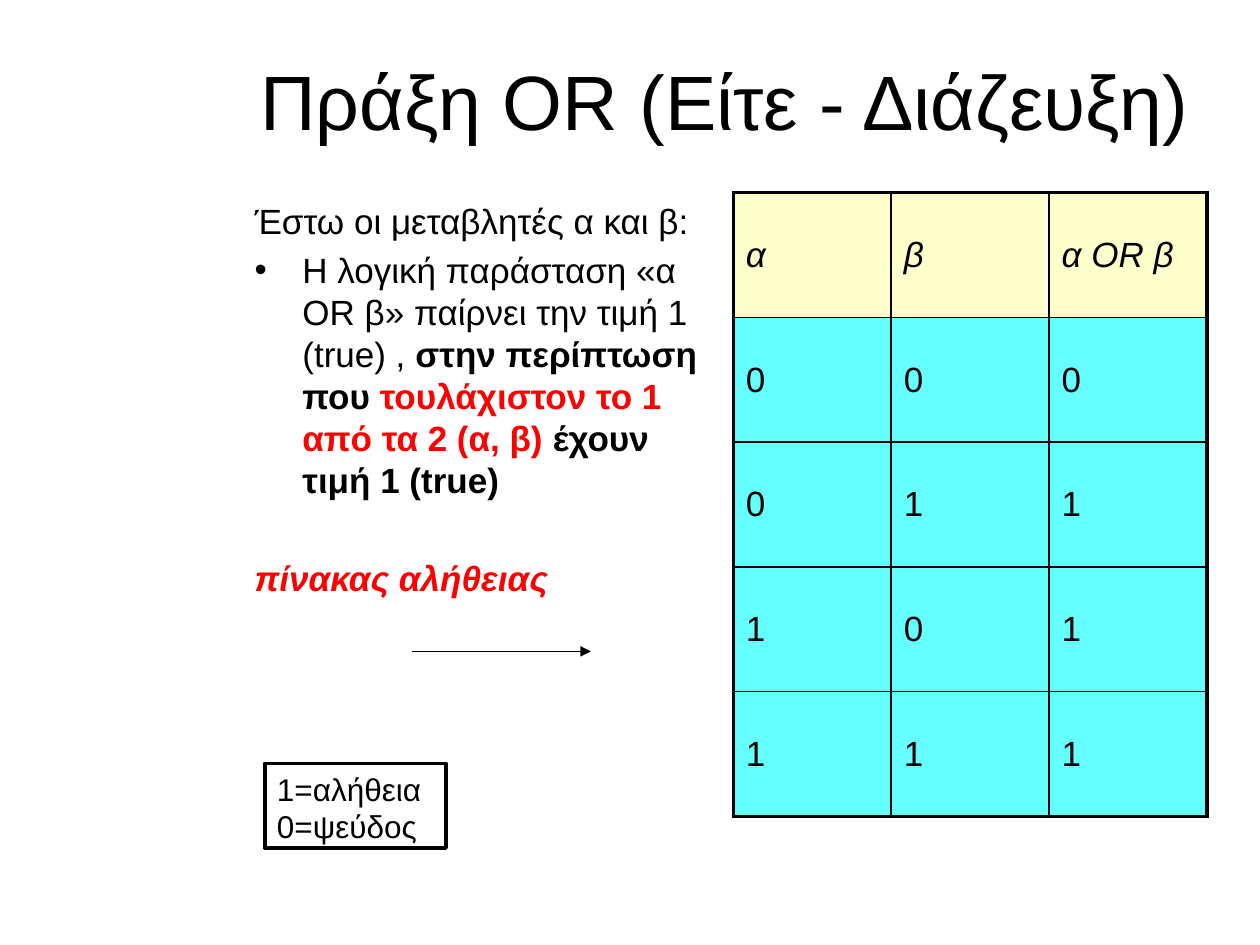
import pptx
import pptx.dml.color
import pptx.enum.shapes
import pptx.enum.text
import pptx.oxml.ns
import pptx.oxml.xmlchemy
import pptx.util
from lxml import etree

Inches, Pt = pptx.util.Inches, pptx.util.Pt
ANCHOR = pptx.enum.text.MSO_ANCHOR
ALIGN = pptx.enum.text.PP_ALIGN
BLACK, RED, CREAM, CYAN = "000000", "FF0000", "FFFFCC", "66FFFF"


def color(code):
    return pptx.dml.color.RGBColor.from_string(code)


def add_node(parent, tag, **attrs):
    return etree.SubElement(parent, pptx.oxml.ns.qn(tag), attrs)


class Board:
    """Holds the text style and the slide being filled."""

    def __init__(self, slide, font="Arial", size=20):
        self.slide, self.font, self.size = slide, font, size

    def style(self, run, size=None, tint=BLACK, bold=False, italic=False):
        font = run.font
        font.name, font.size = self.font, Pt(size or self.size)
        font.bold, font.italic = bold, italic
        font.color.rgb = color(tint)

    def place(self, shape, left, top, width, height):
        shape.left, shape.top = Inches(left), Inches(top)
        shape.width, shape.height = Inches(width), Inches(height)
        shape.text_frame.auto_size = pptx.enum.text.MSO_AUTO_SIZE.NONE

    def title(self, text, *area):
        shape = self.slide.shapes.title
        self.place(shape, *area)
        frame = shape.text_frame
        frame.text = text
        frame.vertical_anchor = ANCHOR.MIDDLE
        frame.paragraphs[0].alignment = ALIGN.CENTER
        self.style(frame.paragraphs[0].runs[0], size=44)

    def body(self, items, *area):
        """Each item is (bullet or None, space before, [(text, style)])."""
        shape = self.slide.placeholders[1]
        self.place(shape, *area)
        frame = shape.text_frame
        frame.text = "\n" * (len(items) - 1)
        for para, (mark, space, parts) in zip(frame.paragraphs, items):
            props = para._p.get_or_add_pPr()
            props.set("marL", str(Inches(0.38)))
            props.set("indent", str(-Inches(0.38)))
            if mark:
                add_node(props, "a:buChar", char=mark)
            else:
                add_node(props, "a:buNone")
            para.space_before = Pt(space)
            for text, look in parts:
                run = para.add_run()
                run.text = text
                self.style(run, **look)

    def arrow(self, left, right, top):
        line = self.slide.shapes.add_connector(
            pptx.enum.shapes.MSO_CONNECTOR.STRAIGHT,
            Inches(left), Inches(top), Inches(right), Inches(top))
        line.line.color.rgb = color(BLACK)
        line.line.width = Pt(0.75)
        add_node(line.line._get_or_add_ln(), "a:tailEnd", type="triangle")
        add_node(line._element.spPr, "a:effectLst")

    def border(self, cell, widths):
        props = cell._tc.get_or_add_tcPr()
        for side, width in zip("LRTB", widths):
            line = add_node(props, "a:ln" + side, w=str(Pt(width)))
            fill = add_node(line, "a:solidFill")
            add_node(fill, "a:srgbClr", val=BLACK)

    def table(self, rows, left, top, width, height):
        """Draws a grid with a thick frame and thin inner lines."""
        high, wide = len(rows), len(rows[0])
        grid = self.slide.shapes.add_table(
            high, wide, Inches(left), Inches(top),
            Inches(width), Inches(height)).table
        grid.first_row = grid.horz_banding = False
        thick, thin = 2.25, 1
        for r, row in enumerate(rows):
            for c, text in enumerate(row):
                cell = grid.cell(r, c)
                edges = (c == 0, c == wide - 1, r == 0, r == high - 1)
                self.border(cell, [thick if e else thin for e in edges])
                cell.fill.solid()
                cell.fill.fore_color.rgb = color(CYAN if r else CREAM)
                cell.vertical_anchor = ANCHOR.MIDDLE
                cell.text_frame.text = text
                self.style(cell.text_frame.paragraphs[0].runs[0],
                           italic=r == 0)

    def box(self, text, *area):
        shape = self.slide.shapes.add_shape(
            pptx.enum.shapes.MSO_SHAPE.RECTANGLE, *map(Inches, area))
        shape.shadow.inherit = False
        shape.fill.background()
        shape.line.color.rgb = color(BLACK)
        shape.line.width = Pt(2.25)
        frame = shape.text_frame
        frame.text = text
        frame.word_wrap = True
        frame.vertical_anchor = ANCHOR.TOP
        for para in frame.paragraphs:
            para.alignment = ALIGN.LEFT
            self.style(para.runs[0], size=18)


def main():
    deck = pptx.Presentation()
    deck.slide_width, deck.slide_height = Inches(10), Inches(7.5)
    board = Board(deck.slides.add_slide(deck.slide_layouts[1]))

    board.title("Πράξη OR (Είτε - Διάζευξη)", 1.92, 0.33, 7.67, 0.92)
    board.body([
        (None, 0, [("Έστω οι μεταβλητές α και β:", {})]),
        ("•", 4, [
            ("Η λογική παράσταση «α OR β» παίρνει την τιμή 1 (true) , ", {}),
            ("στην περίπτωση που ", {"bold": True}),
            ("τουλάχιστον το 1 από τα 2 (α, β) ",
             {"bold": True, "tint": RED}),
            ("έχουν τιμή 1 (true)", {"bold": True}),
        ]),
        (None, 32, [("πίνακας αλήθειας",
                     {"bold": True, "italic": True, "tint": RED})]),
    ], 1.92, 1.53, 3.76, 5)
    board.arrow(3.27, 4.69, 5.17)

    truth = [(a, b, a | b) for a in (0, 1) for b in (0, 1)]
    rows = [("α", "β", "α OR β")] + [tuple(map(str, row)) for row in truth]
    board.table(rows, 5.82, 1.53, 3.76, 4.95)
    board.box("1=αλήθεια\n0=ψεύδος", 2.1, 6.06, 1.44, 0.67)
    deck.save("out.pptx")


if __name__ == "__main__":
    main()
